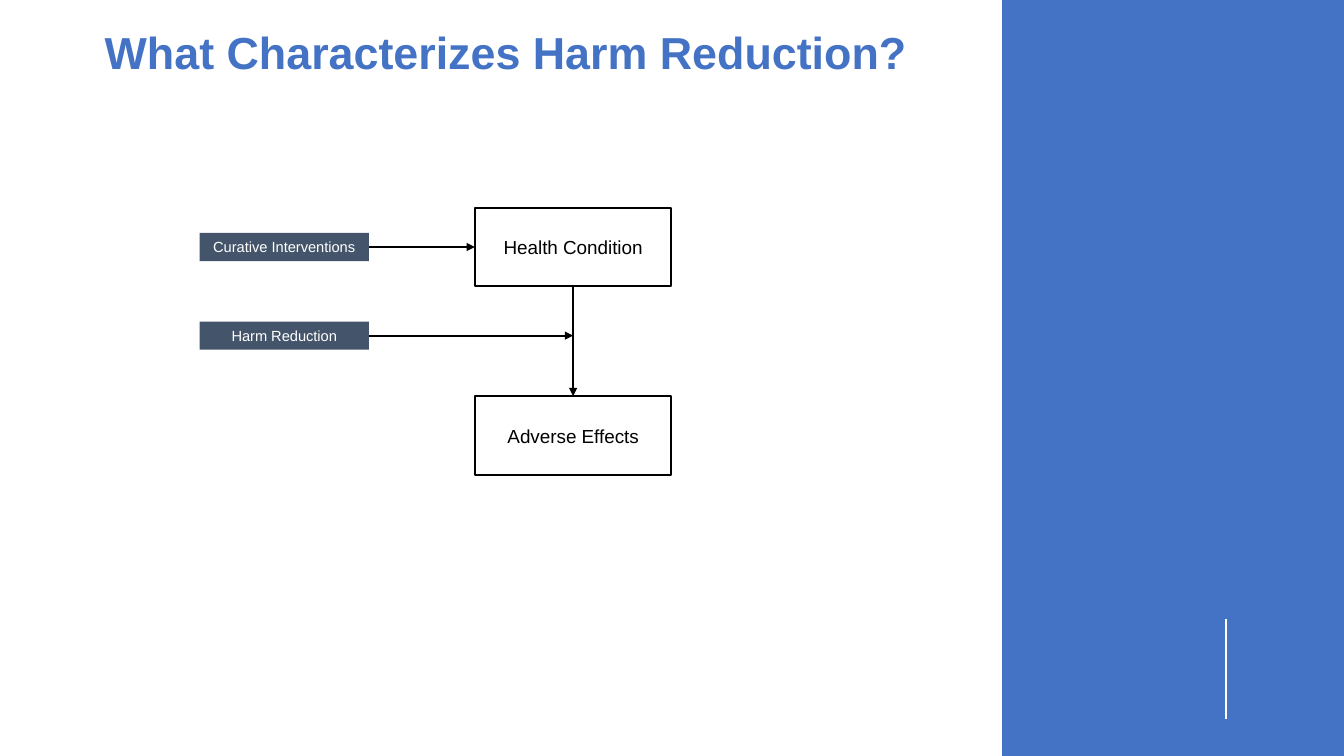
from lxml import etree
from pptx import Presentation, util as u
from pptx.dml.color import RGBColor
from pptx.enum import shapes, text
from pptx.oxml import ns

COLORS = {"blue": "4472C4", "slate": "44546A", "black": "000000", "white": "FFFFFF"}
FONT = "Arial"


def rgb(name):
    """Return the named palette colour."""
    return RGBColor.from_string(COLORS[name])


def add_text(tf, words, size, color, bold=False):
    """Write one centred run into a text frame."""
    tf.word_wrap = True
    p = tf.paragraphs[0]
    p.alignment = text.PP_ALIGN.CENTER
    r = p.add_run()
    r.text = words
    r.font.name, r.font.size, r.font.bold = FONT, u.Pt(size), bold
    r.font.color.rgb = rgb(color)
    return p


def add_box(s, x, y, w, h, fill=None, line=None):
    """Add a rectangle with an optional fill and outline."""
    sp = s.shapes.add_shape(shapes.MSO_SHAPE.RECTANGLE,
                            u.Inches(x), u.Inches(y), u.Inches(w), u.Inches(h))
    sp.shadow.inherit = False
    if fill:
        sp.fill.solid()
        sp.fill.fore_color.rgb = rgb(fill)
    else:
        sp.fill.background()
    if line:
        sp.line.color.rgb = rgb(line)
        sp.line.width = u.Pt(1.5)
    else:
        sp.line.fill.background()
    return sp


def add_label(s, words, x, y, w, h, size, color, **style):
    """Add a rectangle with vertically centred text."""
    tf = add_box(s, x, y, w, h, **style).text_frame
    tf.vertical_anchor = text.MSO_ANCHOR.MIDDLE
    tf.margin_top = tf.margin_bottom = 0
    add_text(tf, words, size, color)


def add_line(s, x1, y1, x2, y2, color="black", width=1.5, arrow=True):
    """Add a straight line, with an arrowhead at its end if wanted."""
    ln = s.shapes.add_connector(shapes.MSO_CONNECTOR.STRAIGHT, u.Inches(x1),
                                u.Inches(y1), u.Inches(x2), u.Inches(y2))
    ln.line.color.rgb = rgb(color)
    ln.line.width = u.Pt(width)
    if arrow:
        tail = etree.SubElement(ln.line._get_or_add_ln(), ns.qn("a:tailEnd"))
        tail.set("type", "triangle")
    etree.SubElement(ln._element.spPr, ns.qn("a:effectLst"))


def side_panel(s, x, y, w, h):
    """Draw the coloured panel and its short vertical rule."""
    add_box(s, x, y, w, h, fill="blue")
    rule_x = x + 2.22
    add_line(s, rule_x, y + 6.14, rule_x, y + 7.13, "white", 1, arrow=False)


def title(s, x, y, w, h):
    """Draw the slide heading."""
    tf = s.shapes.add_textbox(u.Inches(x), u.Inches(y), u.Inches(w), u.Inches(h)).text_frame
    tf.margin_left = tf.margin_right = tf.margin_top = tf.margin_bottom = 0
    p = add_text(tf, "What Characterizes Harm Reduction?", 32, "blue", bold=True)
    p.line_spacing = 0.9


def diagram(s, x, y, w, h):
    """Draw the condition-to-effects flow and the interventions acting on it."""
    state_w, state_h, tag_w, tag_h = 1.95, 0.78, 1.68, 0.28
    state_x = x + w - state_w
    mid_x = state_x + state_w / 2
    effects_y = y + h - state_h
    for words, top in (("Health Condition", y), ("Adverse Effects", effects_y)):
        add_label(s, words, state_x, top, state_w, state_h, 13.5, "black", line="black")
    add_line(s, mid_x, y + state_h, mid_x, effects_y)
    for words, mid_y, target_x in (
            ("Curative Interventions", y + state_h / 2, state_x),
            ("Harm Reduction", y + 1.27, mid_x)):
        add_label(s, words, x, mid_y - tag_h / 2, tag_w, tag_h, 10.5, "white", fill="slate")
        add_line(s, x + tag_w, mid_y, target_x, mid_y)


def main():
    """Build and save the slide."""
    prs = Presentation()
    prs.slide_width, prs.slide_height = u.Inches(13.33), u.Inches(7.5)
    s = prs.slides.add_slide(prs.slide_layouts[6])
    side_panel(s, 9.94, 0, 3.39, 7.5)
    title(s, 0.47, 0.31, 9.1, 1.07)
    diagram(s, 1.98, 2.06, 4.68, 2.65)
    prs.save("out.pptx")


if __name__ == "__main__":
    main()
